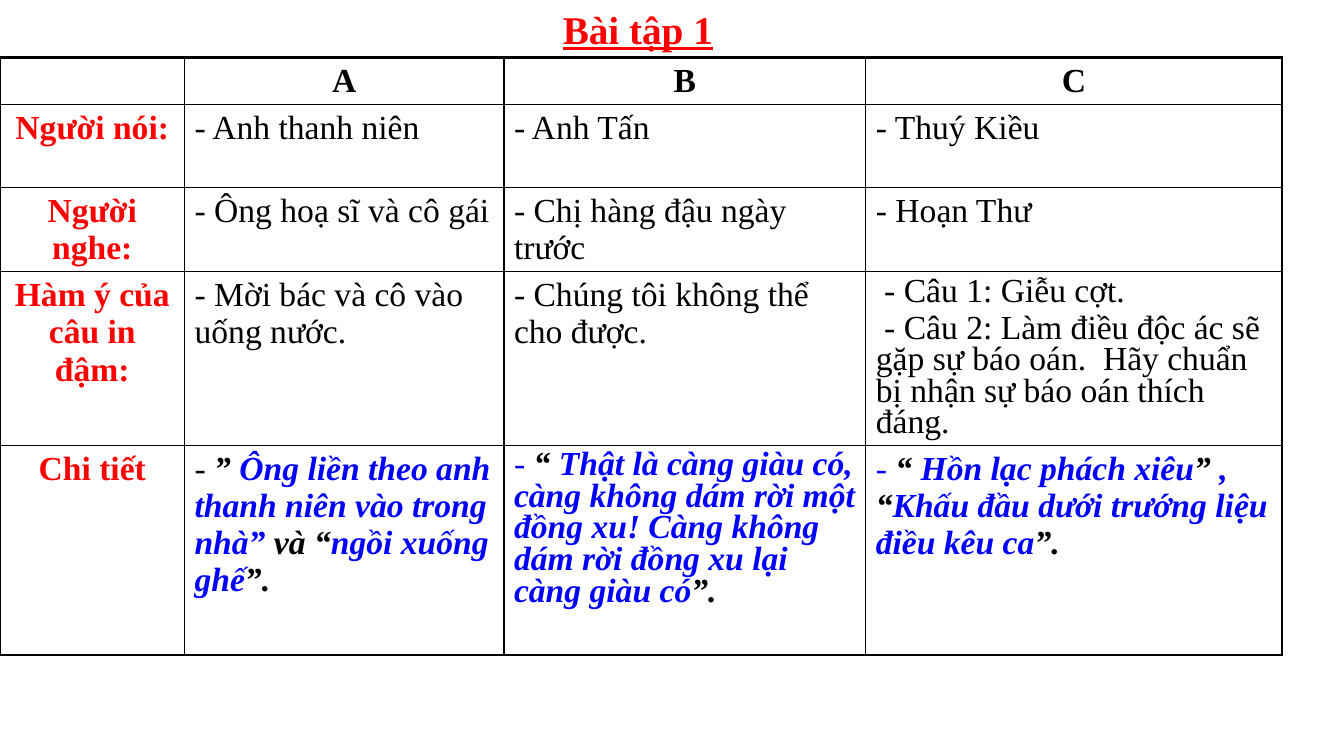
from pptx import Presentation
from pptx.dml.color import RGBColor
from pptx.enum import text
from pptx.oxml.ns import qn
from pptx.util import Cm, Pt
from lxml import etree

BLACK = RGBColor(0, 0, 0)
RED = RGBColor(255, 0, 0)
BLUE = RGBColor(0, 0, 255)
FONT = "Times New Roman"

COL_WIDTHS = [4.65, 8.05, 9.12, 10.49]
ROW_HEIGHTS = [1.17, 2.08, 2.08, 3.58, 5.28]
TIGHT = 0.85

HEADERS = ["", "A", "B", "C"]
LABELS = ["Người nói:", "Người nghe:", "Hàm ý của câu in đậm:", "Chi tiết"]
ANSWERS = [
    [["- Anh thanh niên"], ["- Anh Tấn"], ["- Thuý Kiều"]],
    [["- Ông hoạ sĩ và cô gái"], ["- Chị hàng đậu ngày trước"], ["- Hoạn Thư"]],
    [["- Mời bác và cô vào uống nước."],
     ["- Chúng tôi không thể cho được."],
     [" - Câu 1: Giễu cợt.",
      " - Câu 2: Làm điều độc ác sẽ gặp sự báo oán.  "
      "Hãy chuẩn bị nhận sự báo oán thích đáng."]],
]
# Each quotation starts with a plain dash; the other runs are bold.
QUOTES = [
    [("- ", BLACK), ("” ", BLACK),
     ("Ông liền theo anh thanh niên vào trong nhà” ", BLUE),
     ("và “", BLACK), ("ngồi xuống ghế", BLUE), ("”.", BLACK)],
    [("- ", BLUE), ("“ ", BLACK),
     ("Thật là càng giàu có, càng không dám rời một đồng xu! "
      "Càng không dám rời đồng xu lại càng giàu có", BLUE), ("”.", BLACK)],
    [("- ", BLUE), ("“ ", BLACK), ("Hồn lạc phách xiêu", BLUE), ("”", BLACK),
     (" , ", BLUE), ("“", BLACK),
     ("Khấu đầu dưới trướng liệu điều kêu ca", BLUE), ("”.", BLACK)],
]


def set_font(p, size, color=BLACK, bold=False):
    p.font.name = FONT
    p.font.size = Pt(size)
    p.font.color.rgb = color
    p.font.bold = bold


def add_title(s, title):
    sp = s.shapes.add_textbox(Cm(11.63), 0, Cm(8.89), Cm(1.45))
    tf = sp.text_frame
    tf.word_wrap = True
    p = tf.paragraphs[0]
    p.text = title
    p.alignment = text.PP_ALIGN.CENTER
    set_font(p, 28, RED, True)
    p.font.underline = True


def set_borders(cell, row, col):
    """Draw thin lines between cells and thick ones round the table."""
    outer = {"L": col == 0, "R": col == len(COL_WIDTHS) - 1,
             "T": row == 0, "B": row == len(ROW_HEIGHTS) - 1}
    tcPr = cell._tc.get_or_add_tcPr()
    for side, thick in outer.items():
        ln = etree.SubElement(tcPr, qn(f"a:ln{side}"),
                              w=str(Pt(2.25 if thick else 1)))
        fill = etree.SubElement(ln, qn("a:solidFill"))
        etree.SubElement(fill, qn("a:srgbClr"), val=str(BLACK))


def write_heading(cell, heading, color):
    p = cell.text_frame.paragraphs[0]
    p.text = heading
    p.alignment = text.PP_ALIGN.CENTER
    set_font(p, 24, color, True)


def write_answer(cell, lines):
    tf = cell.text_frame
    for i, line in enumerate(lines):
        p = tf.add_paragraph() if i else tf.paragraphs[0]
        p.text = line
        set_font(p, 24)
        if i:
            p.space_before = Pt(4)
        if len(lines) > 1:
            p.line_spacing = TIGHT


def write_quote(cell, runs):
    p = cell.text_frame.paragraphs[0]
    set_font(p, 24)
    for i, (words, color) in enumerate(runs):
        r = p.add_run()
        r.text = words
        r.font.name = FONT
        r.font.size = Pt(24)
        r.font.italic = True
        r.font.bold = i > 0
        r.font.color.rgb = color
    return p


def add_answer_table(s):
    table = s.shapes.add_table(
        len(ROW_HEIGHTS), len(COL_WIDTHS), 0, Cm(1.45),
        Cm(sum(COL_WIDTHS)), Cm(sum(ROW_HEIGHTS))).table
    table.first_row = table.horz_banding = False
    for column, width in zip(table.columns, COL_WIDTHS):
        column.width = Cm(width)
    for row, height in zip(table.rows, ROW_HEIGHTS):
        row.height = Cm(height)
    for row in range(len(ROW_HEIGHTS)):
        for col in range(len(COL_WIDTHS)):
            cell = table.cell(row, col)
            set_borders(cell, row, col)
            cell.fill.background()

    for col, header in enumerate(HEADERS):
        write_heading(table.cell(0, col), header, BLACK)
    for row, label in enumerate(LABELS, 1):
        write_heading(table.cell(row, 0), label, RED)
    for row, answers in enumerate(ANSWERS, 1):
        for col, lines in enumerate(answers, 1):
            write_answer(table.cell(row, col), lines)
    quotes = [write_quote(table.cell(len(LABELS), col), runs)
              for col, runs in enumerate(QUOTES, 1)]
    quotes[1].line_spacing = TIGHT


def main():
    prs = Presentation()
    prs.slide_width, prs.slide_height = Cm(33.87), Cm(19.05)
    s = prs.slides.add_slide(prs.slide_layouts[6])
    add_answer_table(s)
    add_title(s, "Bài tập 1")
    prs.save("out.pptx")


if __name__ == "__main__":
    main()
